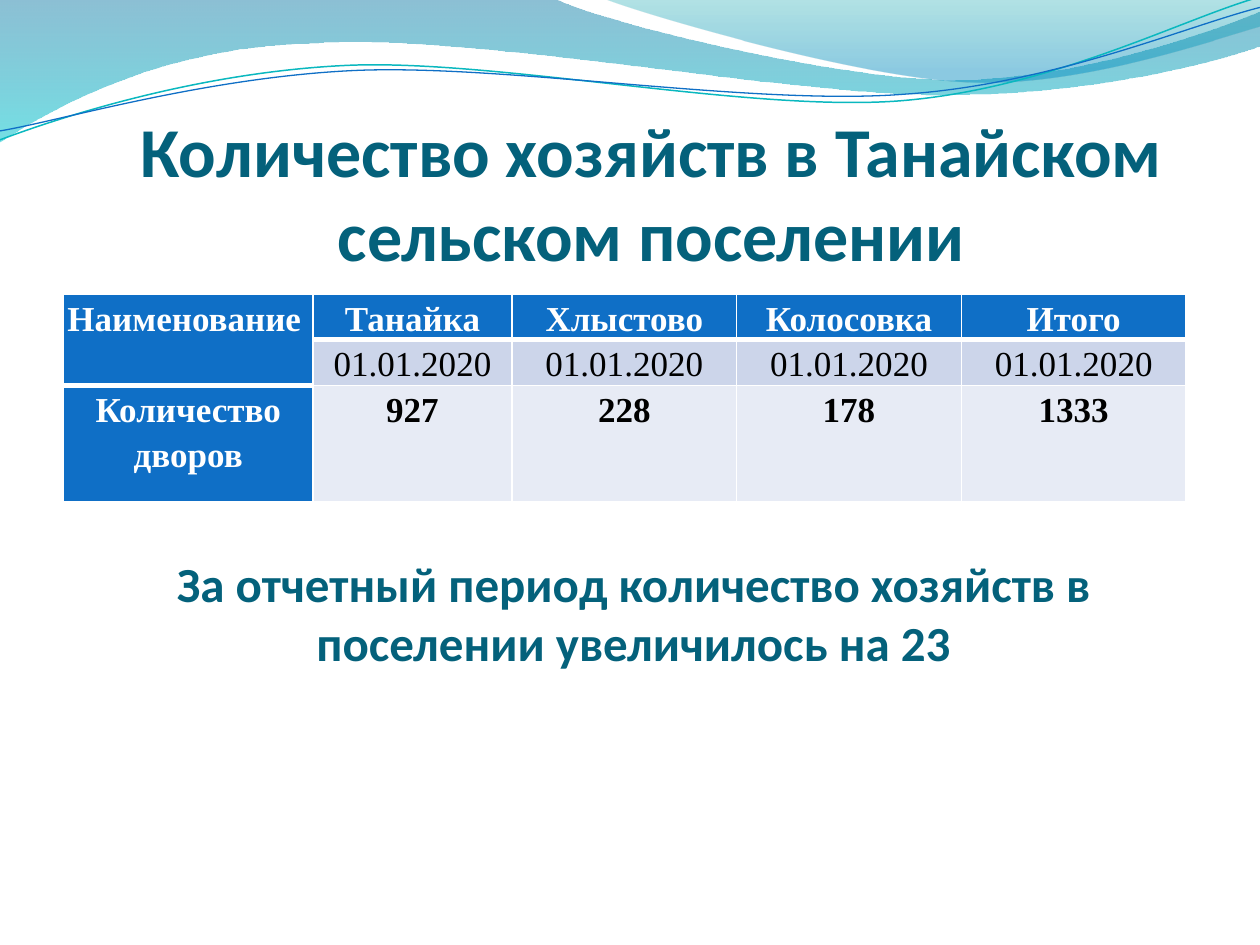
from itertools import islice

from lxml import etree
from pptx import Presentation
from pptx.dml.color import RGBColor
from pptx.enum.text import MSO_ANCHOR, MSO_AUTO_SIZE, PP_ALIGN
from pptx.oxml.ns import qn
from pptx.util import Cm, Pt

LEFT, CENTER = PP_ALIGN.LEFT, PP_ALIGN.CENTER
BOTTOM = MSO_ANCHOR.BOTTOM
NO_AUTOFIT = MSO_AUTO_SIZE.NONE
TITLE_ONLY = 5
LINE_TILT = 357.3

COLORS = {
    "heading": "04617B", "blue": "0F6FC6", "teal": "0AB8BF",
    "white": "FFFFFF", "black": "000000",
    "date_row": "CCD5EA", "count_row": "E7EBF5",
    "deep_blue": "0074A1", "cyan": "00C6CF",
    "sea_green": "00A1A9", "sky": "008BBF",
}

LONG_WAVE = [
    (0, 0), (11.18, -0.03),
    (12.09, 0.43, 16.87, 1.6, 19.25, 1.6),
    (21.67, 1.6, 24.33, 0.66, 25.4, 0.23),
    (25.43, 0.91),
    (24.97, 1.12, 22.1, 1.93, 18.95, 1.91),
    (15.8, 1.91, 9.7, 0.71, 6.53, 0.86),
    (3.28, 0.91, 1.17, 2.11, -0.03, 2.87),
    (0, 0),
]
RIGHT_WAVE = [
    (12.17, -0.03),
    (12.93, 0.28, 17.32, 1.57, 19.53, 1.65),
    (21.74, 1.75, 24.41, 0.81, 25.4, 0.53),
    (25.4, 0), (12.17, -0.03),
]
TEAL_LINE = [
    (-0.05, 2.22),
    (1.19, 1.82, 4.02, 1.04, 7.05, 1.05),
    (10.05, 1.07, 15.02, 2.37, 18.08, 2.29),
    (21.13, 2.2, 23.87, 0.91, 25.41, 0.55),
]
BLUE_LINE = [
    (-0.04, 2.04),
    (1.16, 1.9, 4.18, 1.15, 7.2, 1.16),
    (10.25, 1.18, 15.13, 2.25, 18.19, 2.16),
    (21.21, 2.1, 23.93, 1.06, 25.45, 0.75),
]

COLUMN_WIDTHS = [5.03, 4.01, 4.53, 4.53, 4.53]
ROW_HEIGHTS = [0.92, 0.92, 2.34]
HOUSEHOLDS = [
    ["Наименование", "Танайка", "Хлыстово", "Колосовка", "Итого"],
    [""] + ["01.01.2020"] * 4,
    ["Количество дворов", "927", "228", "178", "1333"],
]


def color(name):
    """Return the palette colour as RGB."""
    return RGBColor.from_string(COLORS[name])


def add_outline(shapes, segments, close):
    """Draw a freeform of straight (2 numbers) and cubic (6 numbers) segments."""
    points = [(Cm(segment[i]), Cm(segment[i + 1]))
              for segment in segments for i in range(0, len(segment), 2)]
    builder = shapes.build_freeform(*points[0])
    builder.add_line_segments(points[1:], close=close)
    shape = builder.convert_to_shape()
    shape.shadow.inherit = False
    steps = iter(list(shape._element.iter(qn("a:lnTo"))))
    for segment in segments[1:]:
        first, *others = islice(steps, len(segment) // 2)
        if others:
            first.tag = qn("a:cubicBezTo")
        for other in others:
            first.append(other[0])
            other.getparent().remove(other)
    return shape


def add_wave(page, segments, stops):
    """Add a closed wave with a translucent downward gradient."""
    shape = add_outline(page.shapes, segments, True)
    shape.line.fill.background()
    shape.fill.gradient()
    shape.fill.gradient_angle = 270
    for stop, (position, name, opacity) in zip(shape.fill.gradient_stops, stops):
        stop.position = position
        stop.color.rgb = color(name)
    solid_colors = shape._element.spPr.iter(qn("a:srgbClr"))
    for element, (position, name, opacity) in zip(solid_colors, stops):
        etree.SubElement(element, qn("a:alpha"), val=str(opacity * 1000))


def add_wave_line(group, segments, name, width):
    """Add an open, slightly tilted curved line."""
    shape = add_outline(group.shapes, segments, False)
    shape.rotation = LINE_TILT
    shape.fill.background()
    shape.line.color.rgb = color(name)
    shape.line.width = Pt(width)


def write(frame, text, *, size, font, ink, bold=True, align=CENTER, spacing=None):
    """Write one formatted paragraph into a text frame."""
    para = frame.paragraphs[0]
    para.alignment = align
    para.line_spacing = spacing
    span = para.add_run()
    span.text = text
    span.font.size = Pt(size)
    span.font.name = font
    span.font.bold = bold
    span.font.color.rgb = color(ink)


def write_heading(box, text, size):
    """Format a box as a bottom-anchored heading."""
    frame = box.text_frame
    frame.word_wrap = True
    frame.auto_size = NO_AUTOFIT
    frame.vertical_anchor = BOTTOM
    frame.margin_left = frame.margin_right = frame.margin_bottom = 0
    frame.margin_top = Cm(0.13)
    write(frame, text, size=size, font="Calibri", ink="heading")


def set_borders(cell, top, bottom):
    """Give a cell white borders, with top and bottom widths in points."""
    properties = cell._tc.get_or_add_tcPr()
    for side, width in (("L", 1), ("R", 1), ("T", top), ("B", bottom)):
        line = etree.SubElement(properties, qn(f"a:ln{side}"), w=str(Pt(width)))
        fill = etree.SubElement(line, qn("a:solidFill"))
        etree.SubElement(fill, qn("a:srgbClr"), val=COLORS["white"])


def format_cell(cell, text, row, column):
    """Fill, frame and write one table cell."""
    is_header = row == 0 or column == 0
    header_end = 1 if column == 0 else 0
    set_borders(cell, 3 if row == header_end + 1 else 1, 3 if row == header_end else 1)
    cell.fill.solid()
    cell.fill.fore_color.rgb = color(
        "blue" if is_header else ("date_row" if row == 1 else "count_row"))
    cell.margin_left = cell.margin_right = Cm(0.08)
    cell.margin_top = cell.margin_bottom = 0
    if text:
        write(cell.text_frame, text, size=20, font="Times New Roman",
              ink="white" if is_header else "black", bold=row != 1,
              align=LEFT if row == column == 0 else CENTER, spacing=1.15)


def add_household_table(page):
    """Add the table of households by settlement."""
    table = page.shapes.add_table(
        len(ROW_HEIGHTS), len(COLUMN_WIDTHS), Cm(1.28), Cm(5.93),
        Cm(sum(COLUMN_WIDTHS)), Cm(sum(ROW_HEIGHTS))).table
    table.horz_banding = False
    for column, width in zip(table.columns, COLUMN_WIDTHS):
        column.width = Cm(width)
    for row, height in zip(table.rows, ROW_HEIGHTS):
        row.height = Cm(height)
    for row, texts in enumerate(HOUSEHOLDS):
        for column, text in enumerate(texts):
            format_cell(table.cell(row, column), text, row, column)
    table.cell(0, 0).merge(table.cell(1, 0))


def main():
    """Build and save the slide."""
    deck = Presentation()
    deck.slide_width, deck.slide_height = Cm(25.4), Cm(19.05)
    page = deck.slides.add_slide(deck.slide_layouts[TITLE_ONLY])
    add_wave(page, LONG_WAVE, [(0, "deep_blue", 45), (1, "cyan", 55)])
    add_wave(page, RIGHT_WAVE, [(0, "sea_green", 30), (0.8, "sky", 45)])
    wave_lines = page.shapes.add_group_shape()
    add_wave_line(wave_lines, TEAL_LINE, "teal", 0.85)
    add_wave_line(wave_lines, BLUE_LINE, "blue", 0.75)
    title = page.shapes.title
    title.left, title.top, title.width, title.height = Cm(1.34), Cm(11.35), Cm(22.86), Cm(2.18)
    write_heading(title, "За отчетный период количество хозяйств в поселении увеличилось на 23", 28)
    add_household_table(page)
    heading = page.shapes.add_textbox(Cm(1.7), Cm(2.38), Cm(22.86), Cm(3.18))
    write_heading(heading, "Количество хозяйств в Танайском сельском поселении", 40)
    deck.save("out.pptx")


if __name__ == "__main__":
    main()
